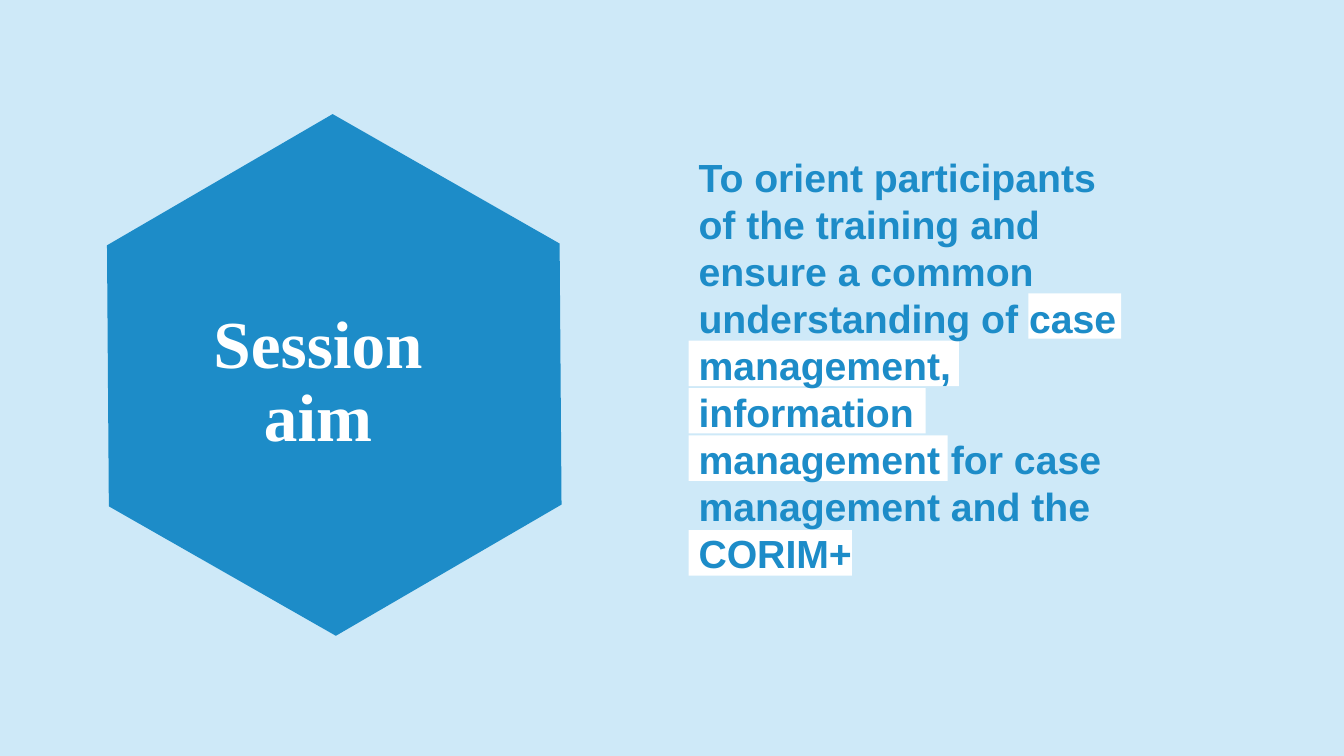
from pptx import Presentation
from pptx.dml.color import RGBColor
from pptx.enum.shapes import MSO_SHAPE
from pptx.enum.text import MSO_ANCHOR, MSO_AUTO_SIZE, PP_ALIGN
from pptx.util import Inches, Pt

HEXAGON, RECTANGLE = MSO_SHAPE.HEXAGON, MSO_SHAPE.RECTANGLE
MIDDLE, CENTER = MSO_ANCHOR.MIDDLE, PP_ALIGN.CENTER
NO_FIT = MSO_AUTO_SIZE.NONE

PALE_BLUE = RGBColor(0xCE, 0xE9, 0xF8)
BLUE = RGBColor(0x1D, 0x8C, 0xC8)
WHITE = RGBColor(0xFF, 0xFF, 0xFF)

TITLE_ONLY = 5
TEXT_LEFT = 6.83
FIRST_MARK_TOP = 2.91
LINE_PITCH = 0.47
MARK_HEIGHT = 0.45
# Text line counted from the first marked one, left edge, width
MARKS = [
    (0, 10.2, 0.92),
    (1, TEXT_LEFT, 2.68),
    (2, TEXT_LEFT, 2.35),
    (3, TEXT_LEFT, 2.57),
    (5, TEXT_LEFT, 1.62),
]
AIM = (
    "To orient participants of the training and ensure a common "
    "understanding of case management, information management for case "
    "management and the CORIM+"
)


def add_plain_shape(page, kind, left, top, width, height, color):
    shape = page.shapes.add_shape(
        kind, Inches(left), Inches(top), Inches(width), Inches(height)
    )
    shape.shadow.inherit = False
    shape.fill.solid()
    shape.fill.fore_color.rgb = color
    shape.line.fill.background()
    return shape


def write_bold(frame, text, font_name, size, color, spacing):
    frame.word_wrap = True
    frame.auto_size = NO_FIT
    para = frame.paragraphs[0]
    para.line_spacing = spacing
    span = para.add_run()
    span.text = text
    span.font.name = font_name
    span.font.size = Pt(size)
    span.font.bold = True
    span.font.color.rgb = color
    return para


def add_hexagon(page):
    hexagon = add_plain_shape(page, HEXAGON, 0.72, 1.48, 5.19, 4.48, BLUE)
    hexagon.adjustments[0] = 0.29
    hexagon.rotation = 29.7
    return hexagon


def add_title(page, hexagon):
    """Fill the title and keep it in front of the hexagon."""
    title = page.shapes.title
    title.left, title.top = Inches(1.9), Inches(3.5)
    title.width, title.height = Inches(2.51), Inches(0.61)
    title.text_frame.vertical_anchor = MIDDLE
    para = write_bold(
        title.text_frame, "Session aim", "Times New Roman", 48, WHITE, 0.9
    )
    para.alignment = CENTER
    hexagon.element.addnext(title.element)


def add_marks(page):
    for line, left, width in MARKS:
        top = FIRST_MARK_TOP + line * LINE_PITCH
        add_plain_shape(page, RECTANGLE, left, top, width, MARK_HEIGHT, WHITE)


def add_aim(page):
    box = page.shapes.add_textbox(
        Inches(TEXT_LEFT), Inches(1.47), Inches(4.6), Inches(4.34)
    )
    write_bold(box.text_frame, AIM, "Arial", 28, BLUE, Pt(33.6))


def main():
    deck = Presentation()
    deck.slide_width, deck.slide_height = Inches(13.33), Inches(7.5)
    page = deck.slides.add_slide(deck.slide_layouts[TITLE_ONLY])
    page.background.fill.solid()
    page.background.fill.fore_color.rgb = PALE_BLUE
    add_title(page, add_hexagon(page))
    add_marks(page)
    add_aim(page)
    deck.save("out.pptx")


if __name__ == "__main__":
    main()
